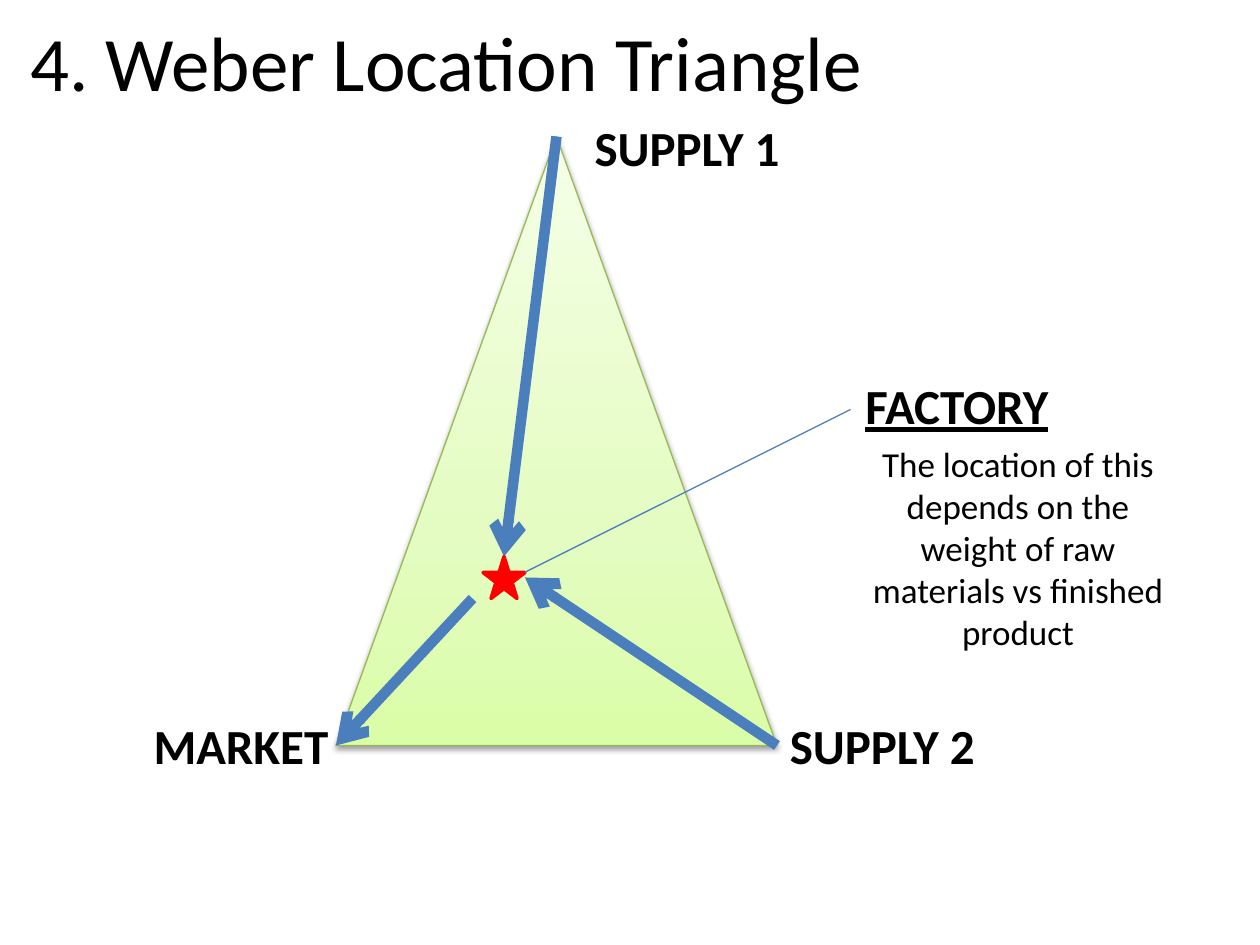
"""Build the Weber location triangle slide."""
from dataclasses import dataclass

from lxml import etree
from pptx import Presentation
from pptx import util as u
from pptx.dml.color import RGBColor
from pptx.enum import shapes, text
from pptx.oxml import parse_xml
from pptx.oxml.ns import nsdecls, qn

BLACK = RGBColor(0x00, 0x00, 0x00)
RED = RGBColor(0xFF, 0x00, 0x00)
BLUE = RGBColor(0x4B, 0x7E, 0xBC)
GREEN = RGBColor(0x98, 0xB9, 0x55)
GRADIENT = (
    (0, RGBColor(0xDA, 0xFD, 0xA7)),
    (35, RGBColor(0xE4, 0xFC, 0xC2)),
    (100, RGBColor(0xF5, 0xFF, 0xE7)),
)
FONT = "Calibri"
COLUMNS, ROWS = 120, 90
CELL = u.Inches(10) // COLUMNS


@dataclass(frozen=True)
class Route:
    """A straight line between two grid points."""
    start: tuple[float, float]
    end: tuple[float, float]
    weight: float = 6
    arrow: bool = True


@dataclass(frozen=True)
class Label:
    """A text box with its place in inches and its type style."""
    words: str
    left: float
    top: float
    width: float
    height: float = 0.57
    size: int = 28
    bold: bool = True
    underline: bool = False
    wrap: bool = False
    align: text.PP_ALIGN = text.PP_ALIGN.LEFT
    anchor: text.MSO_ANCHOR = text.MSO_ANCHOR.TOP
    grow: bool = True


APEX, MARKET, SUPPLY_2 = (53, 13), (32, 71), (74, 71)
STAR_LEFT, STAR_TOP, STAR_SIZE = 46, 53, 4

ROUTES = (
    Route(APEX, (48, STAR_TOP)),
    Route(SUPPLY_2, (50, 55)),
    Route((45, 57), MARKET),
)
CALLOUT = Route((50, 54.5), (81, 39), weight=0.75, arrow=False)
LABELS = (
    Label("FACTORY", 6.77, 2.93, 1.67, underline=True),
    Label("SUPPLY 1", 4.62, 0.88, 1.69),
    Label("SUPPLY 2", 6.17, 5.63, 1.69),
    Label("MARKET", 1.12, 5.63, 1.61),
    Label("The location of this depends on the weight of raw materials vs finished product",
          6.71, 3.46, 2.74, 1.78, size=20, bold=False, wrap=True,
          align=text.PP_ALIGN.CENTER),
    Label("4. Weber Location Triangle", 0.14, 0.05, 7.72, 0.86, size=44, bold=False,
          wrap=True, anchor=text.MSO_ANCHOR.MIDDLE, grow=False),
)


def grid(*cells: float) -> list[u.Emu]:
    """Turn grid counts into lengths."""
    return [u.Emu(round(cell * CELL)) for cell in cells]


def add_outlined(slide, kind, box: tuple, color: RGBColor, weight: float):
    """Add a preset shape on the grid with a plain outline and no shadow."""
    shape = slide.shapes.add_shape(kind, *grid(*box))
    shape.shadow.inherit = False
    shape.line.color.rgb = color
    shape.line.width = u.Pt(weight)
    return shape


def add_triangle(slide) -> None:
    """Add the shaded triangle with its soft shadow."""
    box = (MARKET[0], APEX[1], SUPPLY_2[0] - MARKET[0], MARKET[1] - APEX[1])
    triangle = add_outlined(slide, shapes.MSO_SHAPE.ISOSCELES_TRIANGLE, box, GREEN, 0.75)
    triangle.fill.gradient()
    properties = triangle._element.spPr
    stops = "".join(
        f'<a:gs pos="{place * 1000}"><a:srgbClr val="{color}"/></a:gs>'
        for place, color in GRADIENT
    )
    gradient = parse_xml(
        f'<a:gradFill {nsdecls("a")} rotWithShape="1"><a:gsLst>{stops}</a:gsLst>'
        '<a:lin ang="16200000" scaled="0"/></a:gradFill>'
    )
    properties.replace(properties.find(qn("a:gradFill")), gradient)
    properties.find(qn("a:effectLst")).append(parse_xml(
        f'<a:outerShdw {nsdecls("a")} blurRad="40000" dist="20000" dir="5400000" '
        f'rotWithShape="0"><a:srgbClr val="{BLACK}"><a:alpha val="38000"/></a:srgbClr>'
        '</a:outerShdw>'
    ))


def add_route(slide, route: Route) -> None:
    """Add a line, with an arrowhead at its end when asked."""
    line = slide.shapes.add_connector(
        shapes.MSO_CONNECTOR.STRAIGHT, *grid(*route.start, *route.end))
    line.line.color.rgb = BLUE
    line.line.width = u.Pt(route.weight)
    if route.arrow:
        etree.SubElement(line.line._get_or_add_ln(), qn("a:tailEnd"), type="arrow")
    etree.SubElement(line._element.spPr, qn("a:effectLst"))


def add_star(slide) -> None:
    """Add the star that marks the factory."""
    box = (STAR_LEFT, STAR_TOP, STAR_SIZE, STAR_SIZE)
    star = add_outlined(slide, shapes.MSO_SHAPE.STAR_5_POINT, box, RED, 2)
    star.fill.solid()
    star.fill.fore_color.rgb = RED


def add_label(slide, label: Label) -> None:
    """Add a text box holding one styled run."""
    box = slide.shapes.add_textbox(
        *map(u.Inches, (label.left, label.top, label.width, label.height)))
    frame = box.text_frame
    frame.word_wrap = label.wrap
    frame.vertical_anchor = label.anchor
    if label.grow:
        frame.auto_size = text.MSO_AUTO_SIZE.SHAPE_TO_FIT_TEXT
    paragraph = frame.paragraphs[0]
    paragraph.alignment = label.align
    run = paragraph.add_run()
    run.text = label.words
    run.font.name = FONT
    run.font.size = u.Pt(label.size)
    run.font.bold = label.bold
    run.font.underline = label.underline
    run.font.color.rgb = BLACK


def main() -> None:
    """Build and save the slide."""
    presentation = Presentation()
    presentation.slide_width, presentation.slide_height = grid(COLUMNS, ROWS)
    slide = presentation.slides.add_slide(presentation.slide_layouts[6])
    add_triangle(slide)
    for route in ROUTES:
        add_route(slide, route)
    add_star(slide)
    add_route(slide, CALLOUT)
    for label in LABELS:
        add_label(slide, label)
    presentation.save("out.pptx")


if __name__ == "__main__":
    main()
